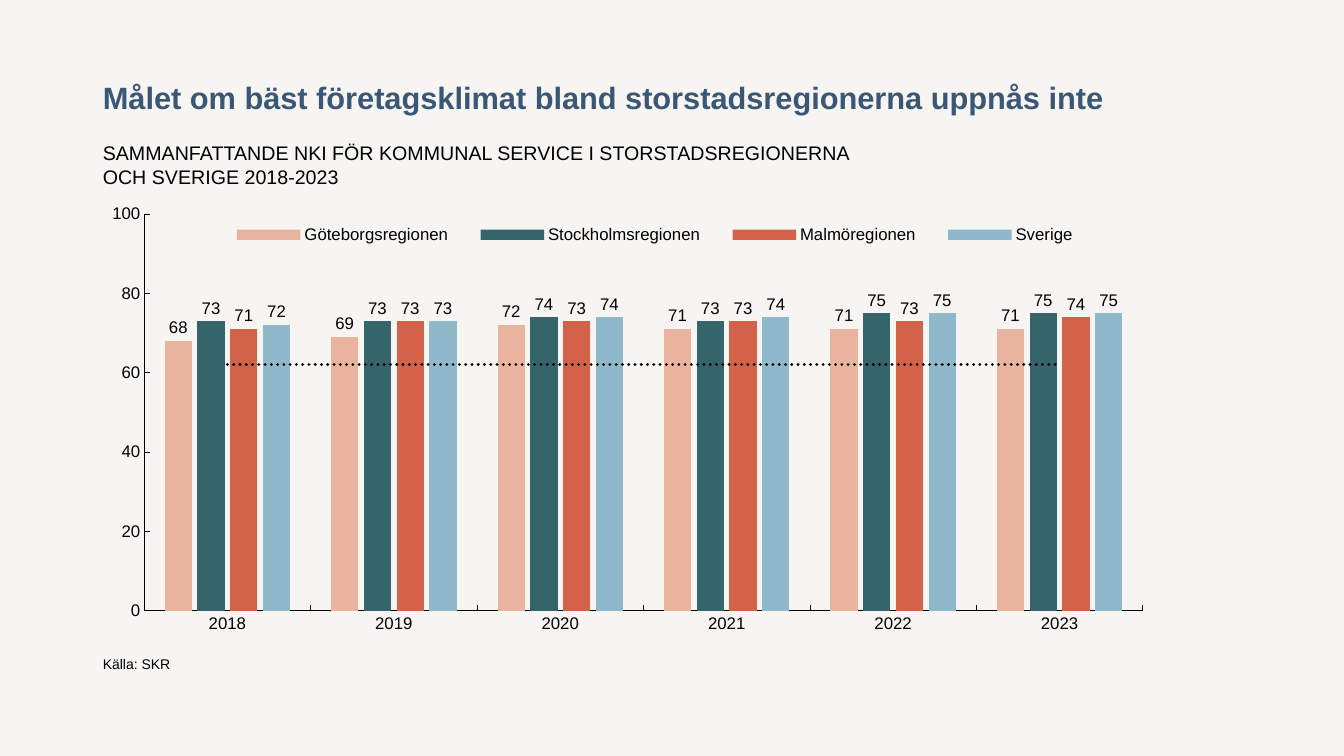
from lxml.etree import SubElement
from pptx import Presentation
from pptx.chart.data import CategoryChartData as ChartData
from pptx.dml.color import RGBColor
from pptx.enum.chart import XL_CHART_TYPE as Kind, XL_LABEL_POSITION as Spot
from pptx.enum.chart import XL_LEGEND_POSITION as Side, XL_MARKER_STYLE as Mark
from pptx.enum.chart import XL_TICK_MARK as Tick
from pptx.enum.dml import MSO_LINE as Dash
from pptx.enum.text import MSO_ANCHOR as Anchor, MSO_AUTO_SIZE as Fit, PP_ALIGN as Align
from pptx.oxml import parse_xml
from pptx.oxml.ns import nsdecls, qn
from pptx.util import Pt

PAPER = RGBColor(0xF6, 0xF5, 0xF1)
BLACK = RGBColor(0, 0, 0)
NAVY = RGBColor(0x3B, 0x57, 0x76)
PEACH = RGBColor(0xEA, 0xB3, 0x9E)
TEAL = RGBColor(0x36, 0x64, 0x6B)
RUST = RGBColor(0xD3, 0x62, 0x48)
SKY = RGBColor(0x8F, 0xB8, 0xCA)
FACE = "Arial"
LEFT = 66.24

TEXTS = [
    (0, "Målet om bäst företagsklimat bland storstadsregionerna uppnås inte",
     (28.8, 828, 57.6), 22, NAVY, True, Anchor.BOTTOM, Pt(31)),
    (1, "SAMMANFATTANDE NKI FÖR KOMMUNAL SERVICE I STORSTADSREGIONERNA OCH SVERIGE 2018-2023",
     (97.2, 573.84, 36.72), 14, BLACK, False, Anchor.TOP, 1.0),
    (3, "Källa: SKR", (464.4, 776.88, 19.44), 10, BLACK, False, Anchor.BOTTOM, 1.0),
]
YEARS = ["2018", "2019", "2020", "2021", "2022", "2023"]
BARS = [
    ("Göteborgsregionen", (68, 69, 72, 71, 71, 71), PEACH),
    ("Stockholmsregionen", (73, 73, 74, 73, 75, 75), TEAL),
    ("Malmöregionen", (71, 73, 73, 73, 73, 74), RUST),
    ("Sverige", (72, 73, 74, 74, 75, 75), SKY),
]
GOAL = ("", (62,) * len(YEARS))
TOP, WIDE, HIGH = 142.56, 765.36, 314.64
PLOT = (36.8, 10.4, 713.3, 283.2)
KEY = (84, 15.7, 635, 18.9)


def style(item, **vals):
    for name, val in vals.items():
        setattr(item, name, val)


def ink(font, size, color=BLACK, bold=False):
    style(font, name=FACE, size=Pt(size), bold=bold)
    font.color.rgb = color


def add_text(slide, idx, text, box, size, color, bold, anchor, gap):
    hold = next(p for p in slide.placeholders if p.placeholder_format.idx == idx)
    top, width, height = box
    style(hold, left=Pt(LEFT), top=Pt(top), width=Pt(width), height=Pt(height))
    frame = hold.text_frame
    style(frame, text=text, word_wrap=True, auto_size=Fit.NONE, vertical_anchor=anchor)
    para = frame.paragraphs[0]
    style(para, alignment=Align.LEFT, line_spacing=gap, space_before=Pt(0))
    ink(para.runs[0].font, size, color, bold)


def layout(box, inner):
    root = parse_xml(f"<c:layout {nsdecls('c')}><c:manualLayout/></c:layout>")
    parts = [size / full for size, full in zip(box, (WIDE, HIGH) * 2)]
    tags = [("layoutTarget", "inner")] if inner else []
    tags += [("xMode", "edge"), ("yMode", "edge"), *zip("xywh", parts)]
    for tag, val in tags:
        SubElement(root[0], qn(f"c:{tag}")).set("val", str(val))
    return root


def place(host, box, inner=False):
    for old in host.findall(qn("c:layout")):
        host.remove(old)
    host.insert(0 if inner else 1, layout(box, inner))


def add_goal(chart):
    goal = chart.plots[0].series[len(BARS)]
    style(goal.format.line, width=Pt(2.25), dash_style=Dash.ROUND_DOT)
    goal.format.line.color.rgb = BLACK
    edge = goal.format.line._get_or_add_ln()
    edge.set("cap", "rnd")
    ser = edge.getparent().getparent()
    for tag in ser.findall(qn("c:invertIfNegative")):
        ser.remove(tag)
    bars = ser.getparent()
    line = parse_xml(
        f'<c:lineChart {nsdecls("c")}><c:grouping val="standard"/>'
        '<c:varyColors val="0"/><c:marker val="1"/></c:lineChart>')
    line.insert(2, ser)
    for axis in bars.findall(qn("c:axId")):
        SubElement(line, qn("c:axId")).set("val", axis.get("val"))
    bars.addnext(line)
    curve = chart.plots[1].series[0]
    curve.marker.style = Mark.NONE
    curve.smooth = False


def add_chart(slide):
    data = ChartData(number_format="0")
    data.categories = YEARS
    for name, vals, *_ in [*BARS, GOAL]:
        data.add_series(name, vals)
    chart = slide.shapes.add_chart(
        Kind.COLUMN_CLUSTERED, Pt(LEFT), Pt(TOP), Pt(WIDE), Pt(HIGH), data).chart
    style(chart, has_title=False, has_legend=True)
    ink(chart.font, 12)
    plot = chart.plots[0]
    style(plot, gap_width=150, overlap=-20, vary_by_categories=False)
    for ser, (_, _, color) in zip(plot.series, BARS):
        ser.format.fill.solid()
        ser.format.fill.fore_color.rgb = color
        labels = ser.data_labels
        style(labels, show_value=True, position=Spot.OUTSIDE_END,
              number_format="0", number_format_is_linked=False)
        ink(labels.font, 12)
    add_goal(chart)
    for axis in (chart.category_axis, chart.value_axis):
        style(axis, has_major_gridlines=False, major_tick_mark=Tick.INSIDE,
              minor_tick_mark=Tick.NONE)
        ink(axis.tick_labels.font, 12)
        axis.format.line.width = Pt(0.5)
        axis.format.line.color.rgb = BLACK
    style(chart.value_axis, minimum_scale=0, maximum_scale=100, major_unit=20)
    legend = chart.legend
    style(legend, position=Side.TOP, include_in_layout=False)
    ink(legend.font, 12)
    root = chart._chartSpace.chart
    place(root.plotArea, PLOT, True)
    key = root.find(qn("c:legend"))
    place(key, KEY)
    key.insert(1, parse_xml(
        f'<c:legendEntry {nsdecls("c")}><c:idx val="{len(BARS)}"/>'
        '<c:delete val="1"/></c:legendEntry>'))


def main():
    deck = Presentation()
    style(deck, slide_width=Pt(960), slide_height=Pt(540))
    slide = deck.slides.add_slide(deck.slide_layouts[4])
    slide.background.fill.solid()
    slide.background.fill.fore_color.rgb = PAPER
    for item in TEXTS:
        add_text(slide, *item)
    for hold in list(slide.placeholders):
        if not hold.text_frame.text:
            hold.element.getparent().remove(hold.element)
    add_chart(slide)
    deck.save("out.pptx")


if __name__ == "__main__":
    main()
